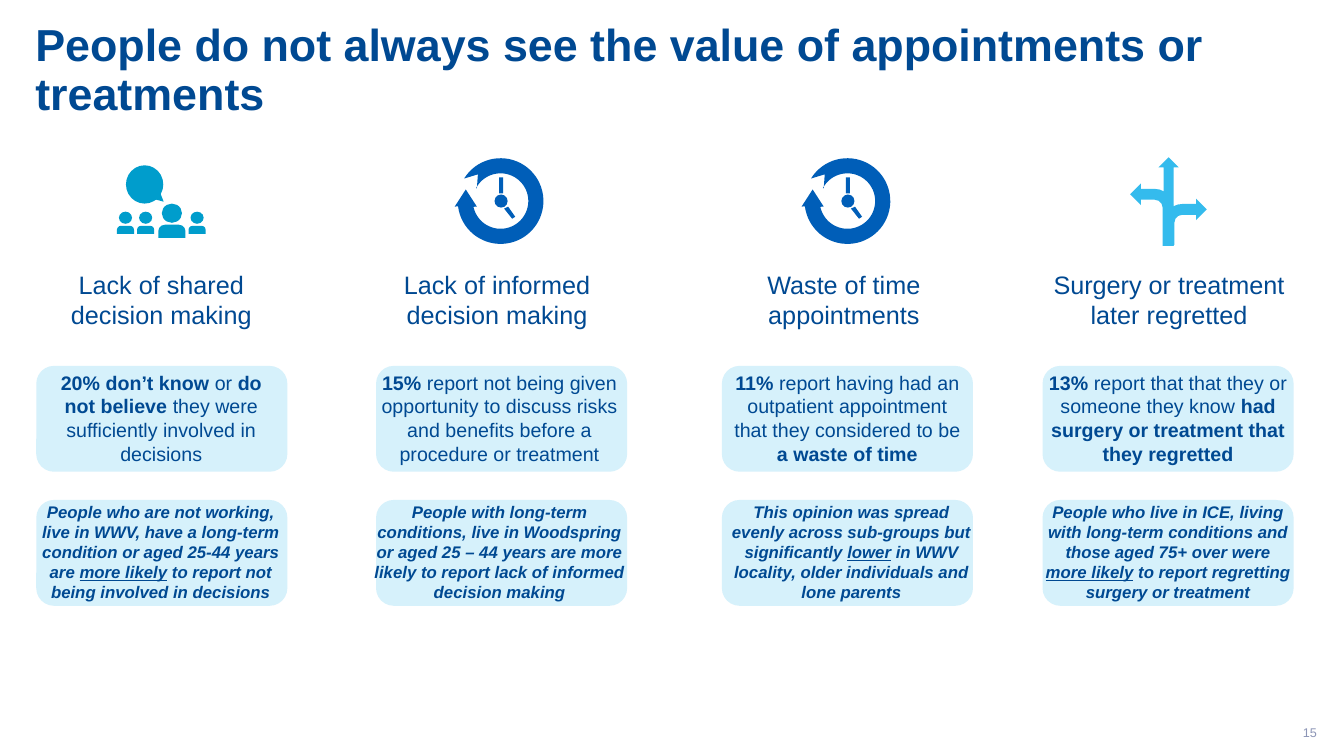
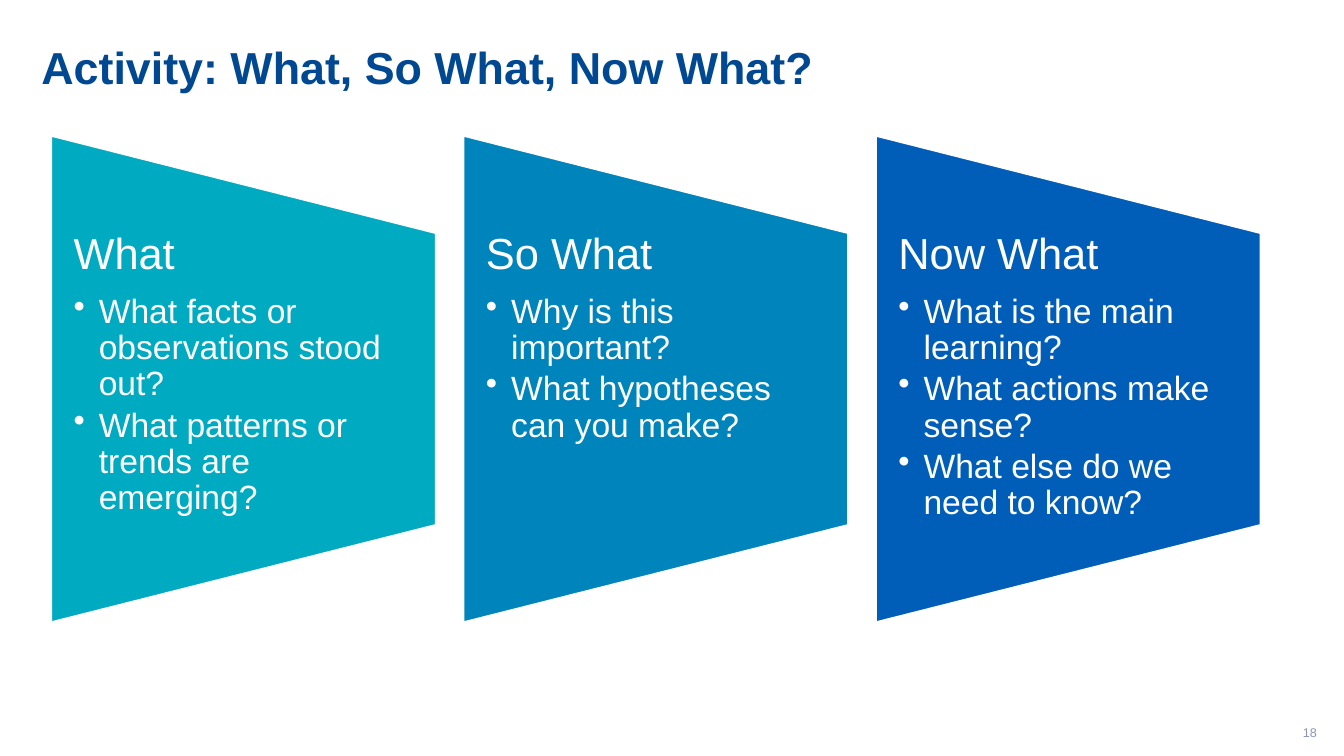
import math

import lxml.etree
import pptx
import pptx.dml.color
import pptx.enum.shapes
import pptx.enum.text
import pptx.oxml.ns
import pptx.util

PX = 9144
FONT = "Arial"
COLORS = {
    "navy": "004992", "gray": "8C95B6", "white": "FFFFFF", "card": "D6F1FB",
    "sky": "34BBED", "cyan": "009DCC", "blue": "005EB8",
    "teal": "00ABC1", "ocean": "0084BC",
}
SHAPE = pptx.enum.shapes.MSO_SHAPE
ALIGN = pptx.enum.text.PP_ALIGN
ANCHOR = pptx.enum.text.MSO_ANCHOR

VALUE_TITLE = "People do not always see the value of appointments or treatments"
ACTIVITY_TITLE = "Activity: What, So What, Now What?"

COLUMNS = [
    {"card": 36, "label": ("Lack of shared decision making", 52, 216),
     "stat": ([("20% don’t know ", True), ("or ", False), ("do not believe ", True),
               ("they were sufficiently involved in decisions", False)], 33, 254),
     "note": ([("People who are not working, live in WWV, have a long-term condition "
                "or aged 25-44 years are ", False), ("more likely", True),
               (" to report not being involved in decisions", False)], 28, 263)},
    {"card": 373, "label": ("Lack of informed decision making", 385, 216),
     "stat": ([("15% ", True), ("report not being given opportunity to discuss risks and "
                                "benefits before a procedure or treatment", False)], 359, 273),
     "note": ([("People with long-term conditions, live in Woodspring or aged 25 – 44 years "
                "are more likely to report lack of informed decision making", False)], 359, 273)},
    {"card": 716, "label": ("Waste of time appointments", 729, 216),
     "stat": ([("11% ", True), ("report having had an outpatient appointment that they "
                                "considered to be ", False), ("a waste of time", True)], 716, 249),
     "note": ([("This opinion was spread evenly across sub-groups but significantly ", False),
               ("lower", True),
               (" in WWV locality, older individuals and lone parents", False)], 713, 263)},
    {"card": 1034, "label": ("Surgery or treatment later regretted", 1025, 269),
     "stat": ([("13% ", True), ("report that that they or someone they know ", False),
               ("had surgery or treatment that they regretted", True)], 1029, 259),
     "note": ([("People who live in ICE, living with long-term conditions and those aged 75+ "
                "over were ", False), ("more likely", True),
               (" to report regretting surgery or treatment", False)], 1027, 263)},
]
CARD_TOPS = (363, 496)
CARD_SIZE = (249, 105)
CLOCK_LEFTS = (451, 795)
PEOPLE = [(116, 210, 17, 8, 13, 12), (136, 210, 17, 8, 13, 12),
          (187, 210, 17, 8, 13, 12), (157, 202, 27, 13, 20, 19)]

PANELS = [
    ("What", "teal", ["What facts or observations stood out?",
                      "What patterns or trends are emerging?"]),
    ("So What", "ocean", ["Why is this important?", "What hypotheses can you make?"]),
    ("Now What", "blue", ["What is the main learning?", "What actions make sense?",
                          "What else do we need to know?"]),
]
PANEL_LEFT, PANEL_TOP, PANEL_WIDTH, PANEL_HEIGHT, PANEL_STEP = 51, 135, 381, 482, 409


def px(*lengths):
    return [pptx.util.Emu(round(length * PX)) for length in lengths]


def rgb(name):
    return pptx.dml.color.RGBColor.from_string(COLORS[name])


def style(para, size, color, align=ALIGN.LEFT, bold=None, italic=None):
    para.alignment = align
    font = para.font
    font.name, font.size, font.bold, font.italic = FONT, pptx.util.Pt(size), bold, italic
    font.color.rgb = rgb(color)


def paint(shape, color):
    shape.shadow.inherit = False
    shape.fill.solid()
    shape.fill.fore_color.rgb = rgb(color)
    shape.line.fill.background()
    return shape


def add_filled(shapes, kind, color, left, top, width, height):
    return paint(shapes.add_shape(kind, *px(left, top, width, height)), color)


def add_outline(shapes, color, points):
    corners = [px(*point) for point in points]
    builder = shapes.build_freeform(*corners[0])
    builder.add_line_segments(corners[1:])
    return paint(builder.convert_to_shape(), color)


def add_text(slide, left, top, width, height, anchor=ANCHOR.TOP):
    frame = slide.shapes.add_textbox(*px(left, top, width, height)).text_frame
    frame.word_wrap = True
    frame.vertical_anchor = anchor
    return frame


def add_runs(para, runs, flag):
    for text, marked in runs:
        span = para.add_run()
        span.text = text
        setattr(span.font, flag, marked)


def add_slide(deck, title, number, left, top):
    slide = deck.slides.add_slide(deck.slide_layouts[5])
    box = slide.shapes.title
    box.left, box.top, box.width, box.height = px(left, top, 1284, 113)
    frame = box.text_frame
    frame.text = title
    frame.word_wrap = True
    frame.auto_size = pptx.enum.text.MSO_AUTO_SIZE.NONE
    frame.vertical_anchor = ANCHOR.TOP
    frame.margin_left, frame.margin_right = px(24, 24)
    frame.margin_top, frame.margin_bottom = px(5, 5)
    para = frame.paragraphs[0]
    para.line_spacing = 0.9
    style(para, 32, "navy", bold=True)
    para = add_text(slide, 1016, 707, 300, 40, ANCHOR.MIDDLE).paragraphs[0]
    para.text = str(number)
    style(para, 9, "gray", ALIGN.RIGHT)
    return slide


def arc(center, radius, start, end):
    steps = 60
    angles = [math.radians(start + (end - start) * step / steps) for step in range(steps + 1)]
    return [(center[0] + radius * math.cos(angle), center[1] + radius * math.sin(angle))
            for angle in angles]


def add_clock(slide, left):
    shapes = slide.shapes.add_group_shape().shapes
    center = (left + 45.5, 199.5)
    notch = [(left + 10, 177), (left + 23, 173), (left + 22, 187)]
    arrow = [(left + 22, 205), (left + 11, 188), (left, 205)]
    ring = notch + arc(center, 27.5, -152, 168) + arrow + arc(center, 42.5, 173, -148)
    add_outline(shapes, "blue", ring)
    add_filled(shapes, SHAPE.OVAL, "blue", left + 39.5, 193, 13, 13)
    add_filled(shapes, SHAPE.RECTANGLE, "blue", left + 44, 176, 4, 16)
    add_outline(shapes, "blue", [(left + 60, 215), (left + 57, 217),
                                 (left + 49, 207), (left + 53, 205)])


def add_people(slide):
    shapes = slide.shapes.add_group_shape().shapes
    bubble = add_filled(shapes, SHAPE.OVAL_CALLOUT, "cyan", 125, 164, 37, 38)
    bubble.adjustments[0], bubble.adjustments[1] = 0.51, 0.45
    for left, top, width, height, head_width, head_height in PEOPLE:
        head_left = left + (width - head_width) / 2
        add_filled(shapes, SHAPE.OVAL, "cyan", head_left, top, head_width, head_height)
        body = add_filled(shapes, SHAPE.ROUND_2_SAME_RECTANGLE, "cyan",
                          left, top + head_height + 2, width, height)
        body.adjustments[0] = 0.5


def add_crossroads(slide):
    shapes = slide.shapes.add_group_shape().shapes
    add_filled(shapes, SHAPE.BENT_ARROW, "sky", 1154, 197, 43, 46)
    left_turn = add_filled(shapes, SHAPE.BENT_ARROW, "sky", 1121, 182, 43, 62)
    left_turn._element.spPr.xfrm.set("flipH", "1")
    add_filled(shapes, SHAPE.RIGHT_ARROW, "sky", 1115, 190, 88, 20).rotation = 270


def build_value_slide(deck):
    slide = add_slide(deck, VALUE_TITLE, 15, 11, 18)
    add_people(slide)
    for left in CLOCK_LEFTS:
        add_clock(slide, left)
    add_crossroads(slide)
    for column in COLUMNS:
        for top in CARD_TOPS:
            add_filled(slide.shapes, SHAPE.ROUNDED_RECTANGLE, "card",
                       column["card"], top, *CARD_SIZE)
        text, left, width = column["label"]
        para = add_text(slide, left, 262, width, 71).paragraphs[0]
        para.text = text
        style(para, 18, "navy", ALIGN.CENTER)
        runs, left, width = column["stat"]
        para = add_text(slide, left, 363, width, 104).paragraphs[0]
        style(para, 14, "navy", ALIGN.CENTER)
        add_runs(para, runs, "bold")
        runs, left, width = column["note"]
        para = add_text(slide, left, 492, width, 111, ANCHOR.MIDDLE).paragraphs[0]
        style(para, 12, "navy", ALIGN.CENTER, bold=True, italic=True)
        add_runs(para, runs, "underline")


def add_bullet(para):
    properties = para._p.get_or_add_pPr()
    indent = px(25)[0]
    properties.set("marL", str(indent))
    properties.set("indent", str(-indent))
    bullet = lxml.etree.SubElement(properties, pptx.oxml.ns.qn("a:buChar"))
    bullet.set("char", "•")


def build_activity_slide(deck):
    slide = add_slide(deck, ACTIVITY_TITLE, 18, 17, 40)
    for index, (heading, color, questions) in enumerate(PANELS):
        left = PANEL_LEFT + index * PANEL_STEP
        shift = (PANEL_HEIGHT - PANEL_WIDTH) / 2
        panel = add_filled(slide.shapes, SHAPE.FLOWCHART_MANUAL_OPERATION, color,
                           left - shift, PANEL_TOP + shift, PANEL_HEIGHT, PANEL_WIDTH)
        panel.rotation = 270
        panel.line.color.rgb = rgb("white")
        panel.line.width = pptx.util.Pt(1)
        frame = add_text(slide, left, 230, PANEL_WIDTH, 289)
        frame.margin_left, frame.margin_right = px(22, 21)
        frame.margin_top, frame.margin_bottom = px(0, 0)
        para = frame.paragraphs[0]
        para.text = heading
        para.line_spacing, para.space_after = 0.9, pptx.util.Pt(11)
        style(para, 31, "white")
        for question in questions:
            para = frame.add_paragraph()
            para.text = question
            add_bullet(para)
            para.line_spacing, para.space_after = 0.9, pptx.util.Pt(3.6)
            style(para, 24, "white")


def main():
    deck = pptx.Presentation()
    deck.slide_width, deck.slide_height = px(1333, 750)
    build_value_slide(deck)
    build_activity_slide(deck)
    deck.save("out.pptx")


if __name__ == "__main__":
    main()
